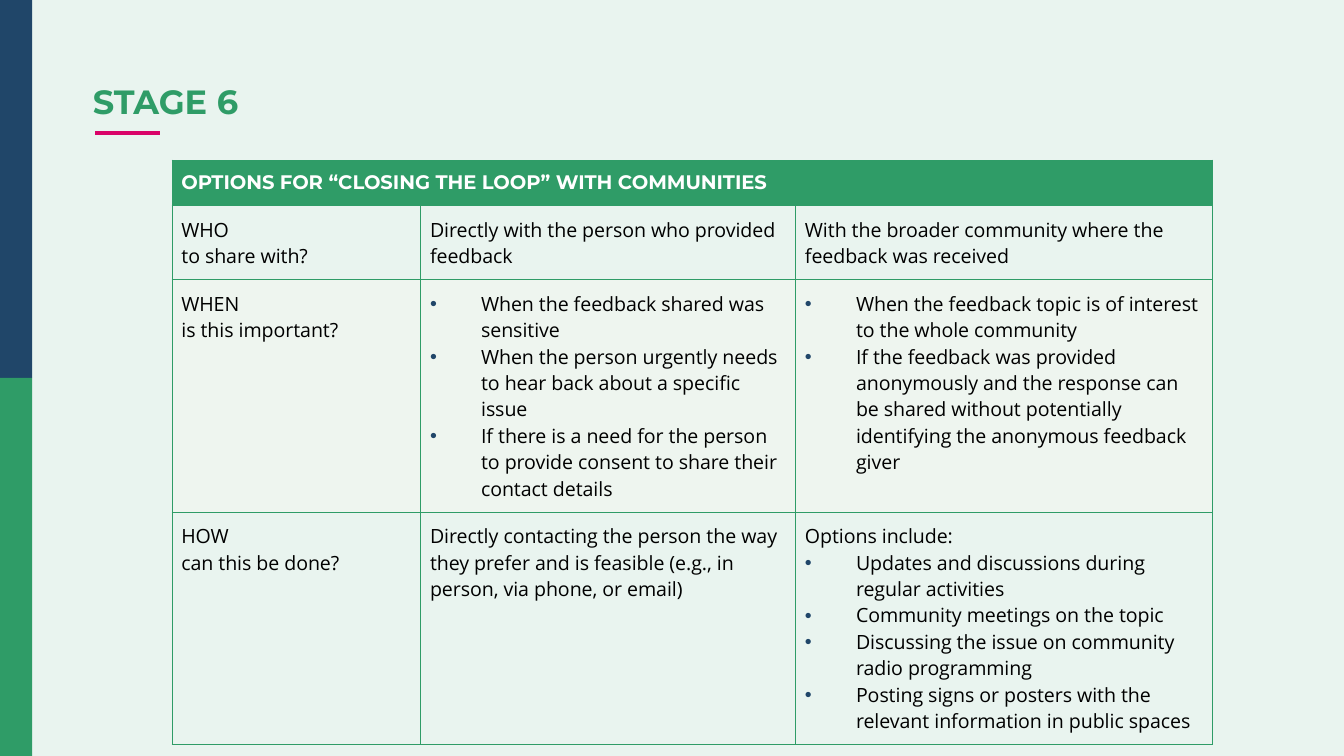
from lxml.etree import SubElement
from pptx import Presentation
from pptx.dml.color import RGBColor
from pptx.enum.shapes import MSO_CONNECTOR, MSO_SHAPE
from pptx.oxml import parse_xml
from pptx.oxml.ns import nsdecls, qn
from pptx.util import Inches, Pt

NAVY, GREEN, PINK, BAND = "204669", "2F9C67", "D90368", "EEF5EF"
BULLET = "• "

# Content: a leading bullet marks a list item
TITLE = "STAGE 6"
HEADER = "OPTIONS FOR “CLOSING THE LOOP” WITH COMMUNITIES"
ROWS = [
    (["WHO", "to share with?"],
     ["Directly with the person who provided feedback"],
     ["With the broader community where the feedback was received"]),
    (["WHEN", "is this important?"],
     ["• When the feedback shared was sensitive",
      "• When the person urgently needs to hear back about a specific issue",
      "• If there is a need for the person to provide consent to share their contact details"],
     ["• When the feedback topic is of interest to the whole community",
      "• If the feedback was provided anonymously and the response can be shared "
      "without potentially identifying the anonymous feedback giver"]),
    (["HOW", "can this be done?"],
     ["Directly contacting the person the way they prefer and is feasible "
      "(e.g., in person, via phone, or email)"],
     ["Options include:",
      "• Updates and discussions during regular activities",
      "• Community meetings on the topic",
      "• Discussing the issue on community radio programming",
      "• Posting signs or posters with the relevant information in public spaces"]),
]
COLUMN_WIDTHS = [1.85, 2.79, 3.1]
ROW_HEIGHTS = [0.34, 0.55, 1.73, 1.73]


def color(value):
    return RGBColor.from_string(value)


def add_bullet(paragraph):
    properties = paragraph._p.get_or_add_pPr()
    properties.set("marL", str(Inches(0.38)))
    properties.set("indent", str(-Inches(0.38)))
    bullet_color = SubElement(properties, qn("a:buClr"))
    SubElement(bullet_color, qn("a:srgbClr")).set("val", NAVY)
    SubElement(properties, qn("a:buFont")).set("typeface", "Arial")
    SubElement(properties, qn("a:buChar")).set("char", BULLET.strip())


def write(text_frame, lines, font="Open Sans", size=10.5, fill="000000", bold=False,
          spacing=None):
    for index, line in enumerate(lines):
        paragraph = text_frame.add_paragraph() if index else text_frame.paragraphs[0]
        if spacing:
            paragraph.line_spacing = spacing
        if line.startswith(BULLET):
            add_bullet(paragraph)
        run = paragraph.add_run()
        run.text = line.removeprefix(BULLET)
        run.font.name, run.font.size, run.font.bold = font, Pt(size), bold
        run.font.color.rgb = color(fill)


def format_cell(cell, fill):
    cell.margin_left = cell.margin_right = Inches(0.07)
    cell.margin_top = cell.margin_bottom = Inches(0.08)
    if fill:
        cell.fill.solid()
        cell.fill.fore_color.rgb = color(fill)
    else:
        cell.fill.background()
    for position, side in enumerate(("lnL", "lnR", "lnT", "lnB")):
        cell._tc.get_or_add_tcPr().insert(position, parse_xml(
            f'<a:{side} {nsdecls("a")} w="{Pt(0.5)}"><a:solidFill>'
            f'<a:srgbClr val="{GREEN}"/></a:solidFill></a:{side}>'))


# Widescreen slide with a 10 % green background
presentation = Presentation()
presentation.slide_width = Inches(10)
presentation.slide_height = Inches(10) * 9 // 16
slide = presentation.slides.add_slide(presentation.slide_layouts[6])
slide.background.fill.solid()
slide.background.fill.fore_color.rgb = color(GREEN)
for background_color in slide.background._cSld.iter(qn("a:srgbClr")):
    SubElement(background_color, qn("a:alpha")).set("val", "10000")

# Side bar in two halves
half_height = presentation.slide_height // 2
for index, fill in enumerate((NAVY, GREEN)):
    bar = slide.shapes.add_shape(MSO_SHAPE.RECTANGLE, 0, half_height * index,
                                 Inches(0.24), half_height)
    bar.shadow.inherit = False
    bar.fill.solid()
    bar.fill.fore_color.rgb = color(fill)
    bar.line.fill.background()

# Title and its underline
underline = slide.shapes.add_connector(MSO_CONNECTOR.STRAIGHT, Inches(0.71), Inches(0.99),
                                       Inches(1.19), Inches(0.99))
underline.line.color.rgb = color(PINK)
underline.line.width = Pt(2.25)
SubElement(underline._element.spPr, qn("a:effectLst"))

title = slide.shapes.add_textbox(Inches(0.69), Inches(0.59), Inches(8.62), Inches(0.37))
title.text_frame.word_wrap = True
title.text_frame.margin_left = 0
write(title.text_frame, [TITLE], font="Montserrat", size=18, fill=GREEN, bold=True, spacing=0.9)

# Options table
table = slide.shapes.add_table(len(ROW_HEIGHTS), len(COLUMN_WIDTHS), Inches(1.28), Inches(1.19),
                               Inches(sum(COLUMN_WIDTHS)), Inches(sum(ROW_HEIGHTS))).table
table.first_row = table.horz_banding = False
for column, width in zip(table.columns, COLUMN_WIDTHS):
    column.width = Inches(width)
for row, height, fill in zip(table.rows, ROW_HEIGHTS, (GREEN, None, BAND, None)):
    row.height = Inches(height)
    for cell in row.cells:
        format_cell(cell, fill)

table.cell(0, 0).merge(table.cell(0, len(COLUMN_WIDTHS) - 1))
write(table.cell(0, 0).text_frame, [HEADER], font="Montserrat", fill="FFFFFF", bold=True)
for row_index, contents in enumerate(ROWS, start=1):
    for column_index, lines in enumerate(contents):
        write(table.cell(row_index, column_index).text_frame, lines)

presentation.save("out.pptx")
